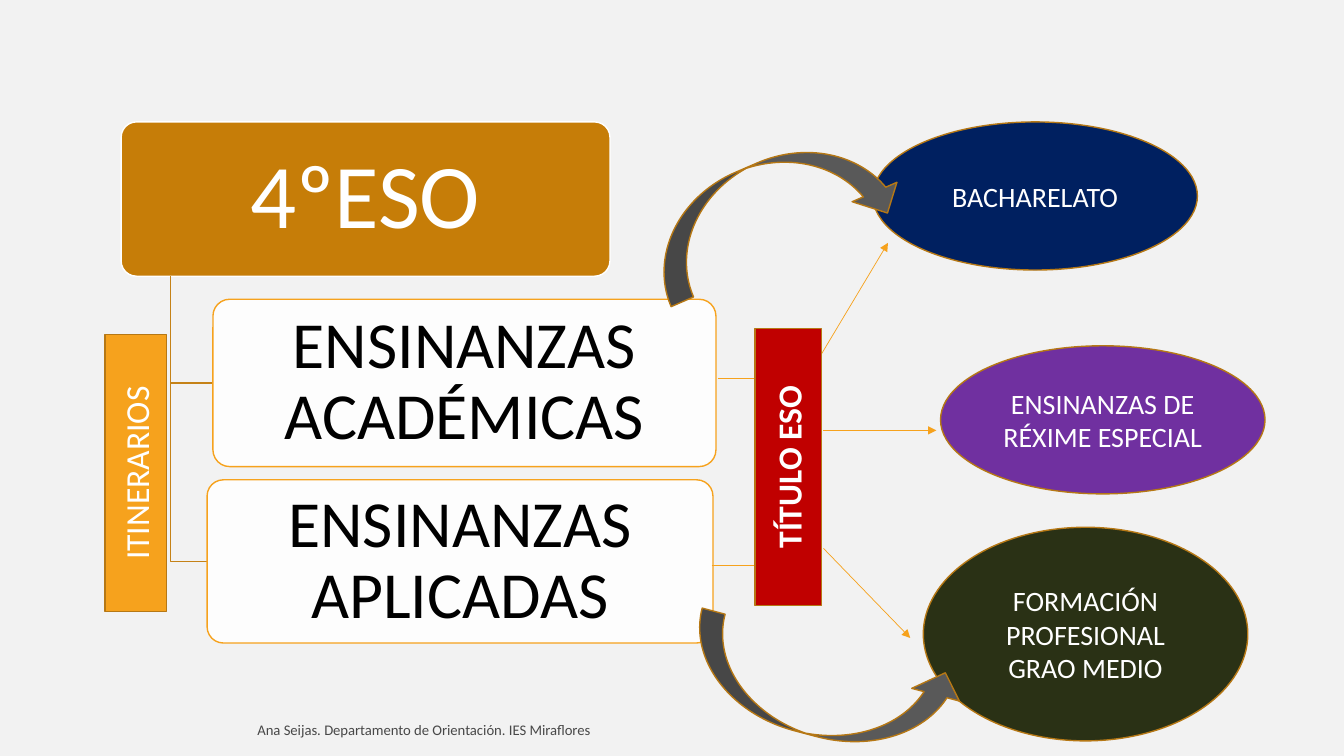
"""Build the 4ºESO pathways slide."""
from dataclasses import dataclass

from lxml.etree import SubElement
from pptx import Presentation
from pptx.dml.color import RGBColor as Color
from pptx.enum.shapes import MSO_CONNECTOR as Connector, MSO_SHAPE as Preset
from pptx.enum.text import MSO_ANCHOR as Anchor, MSO_AUTO_SIZE as AutoSize, PP_ALIGN as Align
from pptx.oxml.ns import qn
from pptx.util import Pt


@dataclass(frozen=True)
class Theme:
    """Colours and type sizes of the slide."""
    font: str = "Calibri"
    background: str = "F2F2F2"
    white: str = "FFFFFF"
    black: str = "000000"
    header: str = "C67D08"
    accent: str = "F6A21D"
    branch: str = "C58217"
    outline: str = "B67815"
    degree: str = "C00000"
    baccalaureate: str = "002060"
    special: str = "7030A0"
    vocational: str = "2A3115"
    curve: str = "595959"
    header_size: float = 65
    card_size: float = 47
    band_size: float = 24
    outcome_size: float = 20
    credit_size: float = 10.5


@dataclass(frozen=True)
class Box:
    """A rectangle in points."""
    left: float
    top: float
    width: float
    height: float

    def inner(self, left, top, width, height):
        """Return a box placed relative to this one."""
        return Box(self.left + left, self.top + top, width, height)

    def point(self, left, top):
        """Return a point placed relative to this box."""
        return self.left + left, self.top + top

    def lengths(self):
        """Return left, top, width and height as lengths."""
        return [Pt(value) for value in (self.left, self.top, self.width, self.height)]


THEME = Theme()


def set_values(target, values):
    """Set each attribute named in a dict of format values."""
    for name, value in values.items():
        setattr(target, name, value)


def set_alpha(properties, percent):
    """Make the solid fill of the given properties partly transparent."""
    color = properties.find(qn("a:solidFill"))[0]
    SubElement(color, qn("a:alpha")).set("val", str(percent * 1000))


def write_text(shape, text, size, color=THEME.white, bold=False, align=Align.CENTER,
               spacing=1.0, insets=(7.2, 3.6)):
    """Write one formatted paragraph in a shape and return its run."""
    frame = shape.text_frame
    across, down = (Pt(inset) for inset in insets)
    set_values(frame, {"word_wrap": True, "auto_size": AutoSize.NONE,
                       "vertical_anchor": Anchor.MIDDLE,
                       "margin_left": across, "margin_right": across,
                       "margin_top": down, "margin_bottom": down})
    paragraph = frame.paragraphs[0]
    set_values(paragraph, {"alignment": align, "line_spacing": spacing})
    run = paragraph.add_run()
    run.text = text
    set_values(run.font, {"name": THEME.font, "size": Pt(size), "bold": bold})
    run.font.color.rgb = Color.from_string(color)
    return run


def set_line(line, color, width=1):
    """Set the colour and width of a line."""
    line.color.rgb = Color.from_string(color)
    line.width = Pt(width)


def add_block(slide, preset, box, fill, outline=THEME.outline, adjustments=()):
    """Add a filled and outlined preset shape."""
    shape = slide.shapes.add_shape(preset, *box.lengths())
    shape.shadow.inherit = False
    shape.fill.solid()
    shape.fill.fore_color.rgb = Color.from_string(fill)
    set_line(shape.line, outline)
    for index, value in enumerate(adjustments):
        shape.adjustments[index] = value
    return shape


def add_link(slide, start, end, arrow=False):
    """Add a thin straight line, with an arrowhead at its end if asked."""
    ends = [Pt(value) for value in (*start, *end)]
    link = slide.shapes.add_connector(Connector.STRAIGHT, *ends)
    set_line(link.line, THEME.accent, 0.5)
    properties = link.element.spPr
    if arrow:
        SubElement(properties.find(qn("a:ln")), qn("a:tailEnd")).set("type", "triangle")
    SubElement(properties, qn("a:effectLst"))


def add_branch(slide, start, end):
    """Add an elbow that goes down and then right."""
    builder = slide.shapes.build_freeform(*(Pt(value) for value in start))
    corner = (start[0], end[1])
    builder.add_line_segments([[Pt(value) for value in point] for point in (corner, end)],
                              close=False)
    branch = builder.convert_to_shape()
    branch.shadow.inherit = False
    branch.fill.background()
    set_line(branch.line, THEME.branch)


def add_band(slide, box, text, fill, bold=False):
    """Add a vertical band whose text reads upwards."""
    band = add_block(slide, Preset.RECTANGLE, box, fill)
    write_text(band, text, THEME.band_size, bold=bold)
    band.element.txBody.bodyPr.set("vert", "vert270")


def add_pathways(slide, box):
    """Draw the header, its two branches and the cards."""
    header = box.inner(0, 0, 349.2, 110.2)
    add_block(slide, Preset.ROUNDED_RECTANGLE, header, THEME.header, THEME.white, [0.1])
    title = slide.shapes.title
    slide.shapes.element.append(title.element)
    left, top, width, height = header.inner(3, 3.5, 342.8, 103.7).lengths()
    set_values(title, {"left": left, "top": top, "width": width, "height": height})
    write_text(title, "4ºESO", THEME.header_size, spacing=0.9, insets=(10, 6.5))
    cards = (("ENSINANZAS ACADÉMICAS", box.inner(65.6, 126.7, 359.3, 119.5)),
             ("ENSINANZAS APLICADAS", box.inner(61.4, 255.6, 361.4, 116.6)))
    for text, place in cards:
        middle = place.top + place.height / 2
        add_branch(slide, box.point(35.2, 110.2), (place.left, middle))
        card = add_block(slide, Preset.ROUNDED_RECTANGLE, place, THEME.white,
                         THEME.accent, [0.1])
        set_alpha(card.element.spPr, 90)
        write_text(card, text, THEME.card_size, THEME.black, spacing=0.9, insets=(10.8, 8.6))


def add_outcomes(slide, box):
    """Draw the ellipses with the studies that follow."""
    outcomes = (("BACHARELATO", THEME.baccalaureate, 0, 0, 105.8),
                ("ENSINANZAS DE RÉXIME ESPECIAL", THEME.special, 48.3, 159.9, 105.8),
                ("FORMACIÓN PROFESIONAL GRAO MEDIO", THEME.vocational, 36, 289.5, 152.6))
    for text, fill, left, top, height in outcomes:
        ellipse = add_block(slide, Preset.OVAL, box.inner(left, top, 231.8, height), fill)
        write_text(ellipse, text, THEME.outcome_size)


def add_degree(slide, box):
    """Draw the degree band with its incoming lines and outgoing arrows."""
    for start, top in ((-26.7, 35.3), (-31, 169.2)):
        add_link(slide, box.point(start, top), box.point(0, top))
    arrows = (((44.6, 23), (95, -61.2)),
              ((48.9, 72.7), (129.6, 72.7)),
              ((48.9, 157), (110.9, 221)))
    for start, end in arrows:
        add_link(slide, box.point(*start), box.point(*end), arrow=True)
    add_band(slide, box, "TÍTULO ESO", THEME.degree, bold=True)


def add_curve(slide, box, rotation, flipped=False, adjustments=()):
    """Draw a curved arrow from a card to an ellipse."""
    curve = add_block(slide, Preset.CURVED_UP_ARROW, box, THEME.curve,
                      adjustments=adjustments)
    curve.rotation = rotation
    if flipped:
        curve.element.spPr.find(qn("a:xfrm")).set("flipV", "1")


def add_credit(slide, box):
    """Write the author line at the foot."""
    credit = slide.shapes.add_textbox(*box.lengths())
    run = write_text(credit, "Ana Seijas. Departamento de Orientación. IES Miraflores",
                     THEME.credit_size, THEME.black, align=Align.RIGHT)
    set_alpha(run.font._element, 70)


def main():
    """Build the slide and save it."""
    presentation = Presentation()
    set_values(presentation, {"slide_width": Pt(960), "slide_height": Pt(540)})
    slide = presentation.slides.add_slide(presentation.slide_layouts[5])
    slide.background.fill.solid()
    slide.background.fill.fore_color.rgb = Color.from_string(THEME.background)
    add_pathways(slide, Box(86.5, 87.1, 424.9, 372.2))
    add_outcomes(slide, Box(623.5, 87.1, 280.1, 442.1))
    add_band(slide, Box(74.9, 239, 43.9, 198), "ITINERARIOS", THEME.accent)
    add_degree(slide, Box(539.3, 234.7, 47.5, 198))
    add_curve(slide, Box(457.9, 115.2, 185.8, 69.8), 336.6, flipped=True)
    add_curve(slide, Box(489.6, 458.6, 197.3, 67.7), 14.9, adjustments=(0.25, 0.52, 0.25))
    add_credit(slide, Box(150, 506.9, 279.1, 28.8))
    presentation.save("out.pptx")


if __name__ == "__main__":
    main()
